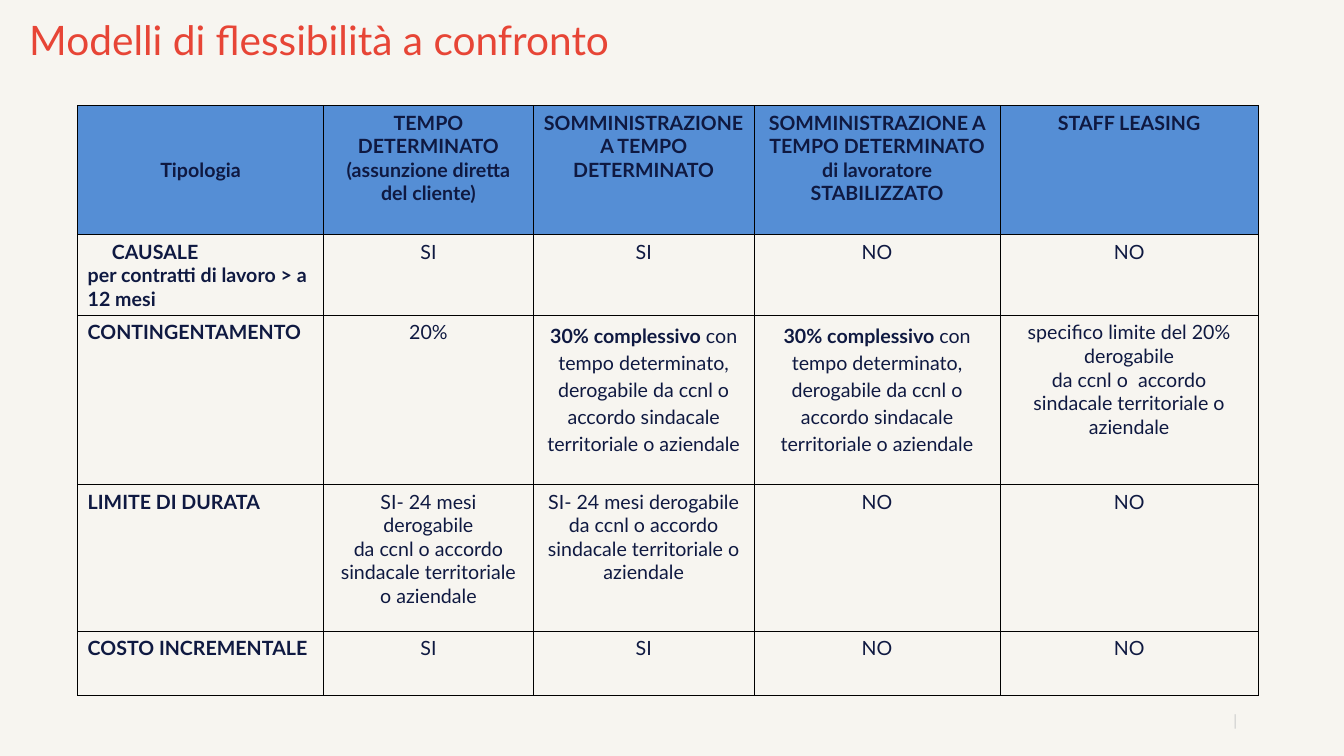
from dataclasses import dataclass

from lxml.etree import SubElement
from pptx import Presentation
from pptx.dml.color import RGBColor
from pptx.enum.text import MSO_ANCHOR, MSO_AUTO_SIZE, PP_ALIGN
from pptx.oxml.ns import qn
from pptx.util import Inches, Pt


@dataclass(frozen=True)
class Theme:
    font: str = "Lato"
    background: str = "F7F5F0"
    title: str = "E74536"
    ink: str = "0F1941"
    header: str = "558ED5"
    border: str = "000000"
    mark: str = "CDCDCD"
    title_size: int = 29
    cell_size: int = 14
    mark_size: int = 11
    border_width: float = 0.75


THEME = Theme()
COLUMNS = (2.44, 2.08, 2.19, 2.44, 2.56)
ROWS = (1.28, 0.8, 1.68, 1.45, 0.64)

# A cell is a list of paragraphs; "**" separates a bold lead from the rest.
ACCORDO = "da ccnl o accordo sindacale territoriale o aziendale"
COMPLESSIVO = [f"30% complessivo **con tempo determinato, derogabile {ACCORDO}"]
DURATA = ["SI- 24 mesi derogabile", ACCORDO]
SOMMINISTRAZIONE = "SOMMINISTRAZIONE A TEMPO DETERMINATO"
SI, NO = ["SI"], ["NO"]
MODELLI = [
    [["Tipologia"],
     ["TEMPO DETERMINATO", "(assunzione diretta del cliente)"],
     [SOMMINISTRAZIONE],
     [SOMMINISTRAZIONE, "di lavoratore STABILIZZATO"],
     ["STAFF LEASING"]],
    [["CAUSALE", "per contratti di lavoro > a 12 mesi"], SI, SI, NO, NO],
    [["CONTINGENTAMENTO"], ["20%"], COMPLESSIVO, COMPLESSIVO,
     ["specifico limite del 20% derogabile",
      "da ccnl o  accordo sindacale territoriale o aziendale"]],
    [["LIMITE DI DURATA"], DURATA, DURATA, NO, NO],
    [["COSTO INCREMENTALE"], SI, SI, NO, NO],
]


def style_font(font, size, color, bold=None):
    font.name, font.size, font.bold = THEME.font, Pt(size), bold
    font.color.rgb = RGBColor.from_string(color)


def add_title(slide, text, left, top, width, height):
    sp = slide.shapes.title
    sp.left, sp.top, sp.width, sp.height = map(Inches, (left, top, width, height))
    tf = sp.text_frame
    tf.auto_size = MSO_AUTO_SIZE.NONE
    tf.vertical_anchor = MSO_ANCHOR.TOP
    tf.margin_left = Inches(0.38)
    p = tf.paragraphs[0]
    p.text, p.alignment = text, PP_ALIGN.LEFT
    style_font(p.font, THEME.title_size, THEME.title, False)


def add_borders(cell):
    tc_pr = cell._tc.get_or_add_tcPr()
    for side in ("lnL", "lnR", "lnT", "lnB"):
        line = SubElement(tc_pr, qn(f"a:{side}"), w=str(Pt(THEME.border_width)))
        fill = SubElement(line, qn("a:solidFill"))
        SubElement(fill, qn("a:srgbClr"), val=THEME.border)


def fill_cell(cell, paragraphs, is_header, is_label):
    add_borders(cell)
    if is_header:
        cell.fill.solid()
        cell.fill.fore_color.rgb = RGBColor.from_string(THEME.header)
    else:
        cell.fill.background()
    centred = is_header or not is_label
    cell.vertical_anchor = MSO_ANCHOR.MIDDLE if is_header and is_label else MSO_ANCHOR.TOP
    tf = cell.text_frame
    for i, text in enumerate(paragraphs):
        p = tf.add_paragraph() if i else tf.paragraphs[0]
        p.alignment = PP_ALIGN.CENTER if centred else PP_ALIGN.LEFT
        if text == "CAUSALE":
            p._p.get_or_add_pPr().set("indent", str(Inches(0.24)))
        style_font(p.font, THEME.cell_size, THEME.ink, is_header or is_label)
        lead, mark, rest = text.partition("**")
        r = p.add_run()
        r.text = lead
        if mark:
            p.line_spacing = 1.15
            r.font.bold = True
            p.add_run().text = rest


def add_comparison(slide, rows, left, top):
    frame = slide.shapes.add_table(len(ROWS), len(COLUMNS), Inches(left), Inches(top),
                                   Inches(sum(COLUMNS)), Inches(sum(ROWS)))
    table = frame.table
    table.horz_banding = False
    for column, width in zip(table.columns, COLUMNS):
        column.width = Inches(width)
    for row, height in zip(table.rows, ROWS):
        row.height = Inches(height)
    for r, row in enumerate(rows):
        for c, paragraphs in enumerate(row):
            fill_cell(table.cell(r, c), paragraphs, r == 0, c == 0)


def add_footer_mark(slide, left, top, width, height):
    sp = slide.shapes.add_textbox(*map(Inches, (left, top, width, height)))
    tf = sp.text_frame
    tf.word_wrap = True
    tf.margin_left = tf.margin_right = tf.margin_top = tf.margin_bottom = 0
    tf.vertical_anchor = MSO_ANCHOR.MIDDLE
    p = tf.paragraphs[0]
    p.text, p.alignment = "|", PP_ALIGN.RIGHT
    style_font(p.font, THEME.mark_size, THEME.mark)


def main():
    prs = Presentation()
    prs.slide_width, prs.slide_height = Inches(13.33), Inches(7.5)
    slide = prs.slides.add_slide(prs.slide_layouts.get_by_name("Title Only"))
    slide.background.fill.solid()
    slide.background.fill.fore_color.rgb = RGBColor.from_string(THEME.background)
    add_footer_mark(slide, 12.2, 6.95, 0.07, 0.4)
    add_comparison(slide, MODELLI, 0.77, 1.05)
    add_title(slide, "Modelli di flessibilità a confronto", -0.09, 0.1, 12.94, 0.42)
    prs.save("out.pptx")


if __name__ == "__main__":
    main()
